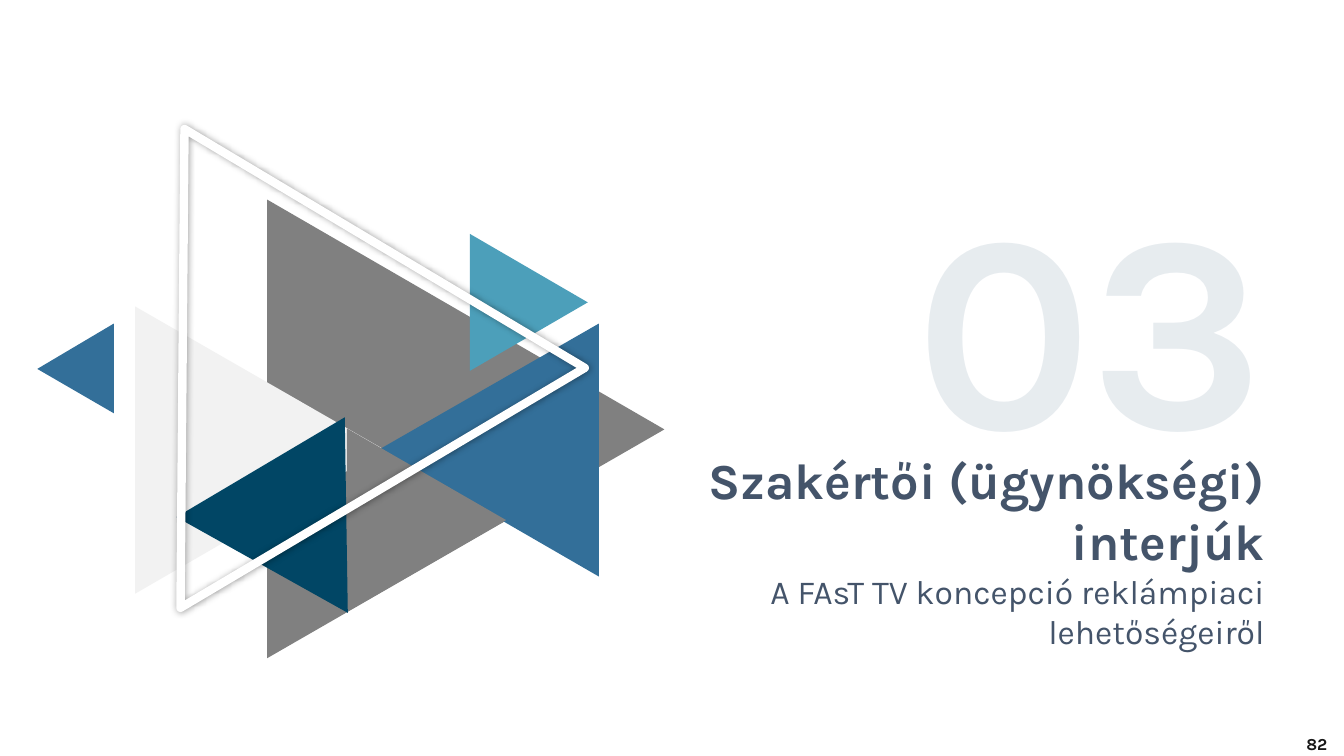
from lxml import etree
from pptx import Presentation
from pptx.dml.color import RGBColor
from pptx.enum.text import MSO_ANCHOR, PP_ALIGN
from pptx.oxml import parse_xml
from pptx.oxml.ns import nsdecls, qn
from pptx.util import Inches, Pt

RIGHT, CENTER = PP_ALIGN.RIGHT, PP_ALIGN.CENTER
TOP, MIDDLE = MSO_ANCHOR.TOP, MSO_ANCHOR.MIDDLE
FONT = "Karla"
NAVY, GREY, BLUE = "44546A", "808080", "336F99"

TRIANGLES = [
    (GREY, [(6.22, 2.98), (2.28, 5.25), (2.28, 0.7)]),
    ("F2F2F2", [(3.44, 3.18), (0.97, 1.76), (0.97, 4.61)]),
    (BLUE, [(3.39, 3.18), (5.57, 1.93), (5.57, 4.44)]),
    (BLUE, [(0, 2.38), (0.76, 1.93), (0.76, 2.82)]),
    ("4C9FBA", [(5.46, 1.72), (4.29, 2.4), (4.29, 1.04)]),
    (GREY, [(4.65, 3.88), (3.07, 4.79), (3.07, 2.97)]),
    ("014665", [(3.08, 4.8), (3.05, 2.86), (1.38, 3.85)]),
]
FRAME = [(1.42, 4.75), (1.46, 0), (5.43, 2.37)]


def rgb(color):
    return RGBColor.from_string(color)


def add_triangle(s, left, top, points):
    corners = [(Inches(left + x), Inches(top + y)) for x, y in points]
    builder = s.shapes.build_freeform(*corners[0])
    builder.add_line_segments(corners[1:], close=True)
    sp = builder.convert_to_shape()
    sp.shadow.inherit = False
    return sp


def add_triangles(s, left, top):
    for color, points in TRIANGLES:
        sp = add_triangle(s, left, top, points)
        sp.fill.solid()
        sp.fill.fore_color.rgb = rgb(color)
        sp.line.fill.background()

    frame = add_triangle(s, left, top, FRAME)
    frame.fill.background()
    frame.line.color.rgb = rgb("FFFFFF")
    frame.line.width = Pt(6)
    etree.SubElement(frame.line._ln, qn("a:round"))
    effects = frame._element.spPr.find(qn("a:effectLst"))
    effects.append(parse_xml(
        f'<a:outerShdw {nsdecls("a")} blurRad="{Pt(5)}" dist="0" dir="0">'
        '<a:srgbClr val="000000"><a:alpha val="40000"/></a:srgbClr></a:outerShdw>'))


def add_text(s, left, top, width, height, align, anchor, lines):
    box = s.shapes.add_textbox(Inches(left), Inches(top), Inches(width), Inches(height))
    tf = box.text_frame
    tf.word_wrap = True
    tf.vertical_anchor = anchor
    for i, (text, size, bold, color) in enumerate(lines):
        p = tf.add_paragraph() if i else tf.paragraphs[0]
        p.alignment = align
        r = p.add_run()
        r.text = text
        r.font.name = FONT
        r.font.size = Pt(size)
        r.font.bold = bold
        r.font.color.rgb = rgb(color)
    return tf


def add_section_title(s, left, top, width):
    tf = add_text(s, left + 1.7, top, width - 1.7, 3.13, RIGHT, TOP,
                  [("03", 200, True, "265373")])
    p = tf.paragraphs[0]
    p.line_spacing = 0.9
    rPr = p.runs[0].font._element
    rPr.set("spc", "-150")
    alpha = etree.SubElement(rPr.find(".//" + qn("a:srgbClr")), qn("a:alpha"))
    alpha.set("val", "11000")

    add_text(s, left, top + 2.61, width, 2.73, RIGHT, TOP, [
        ("Szakértői (ügynökségi) interjúk", 36, True, NAVY),
        ("A FAsT TV koncepció reklámpiaci lehetőségeiről", 24, False, NAVY),
    ])


def add_page_number(s, left, top):
    add_text(s, left, top, 0.84, 0.54, CENTER, MIDDLE, [("82", 12, True, "181818")])


def main():
    prs = Presentation()
    prs.slide_width, prs.slide_height = Inches(13.33), Inches(7.5)
    s = prs.slides.add_slide(prs.slide_layouts[6])
    add_triangles(s, 0.37, 1.28)
    add_section_title(s, 5.92, 1.8, 6.72)
    add_page_number(s, 12.64, 7.11)
    prs.save("out.pptx")


if __name__ == "__main__":
    main()
